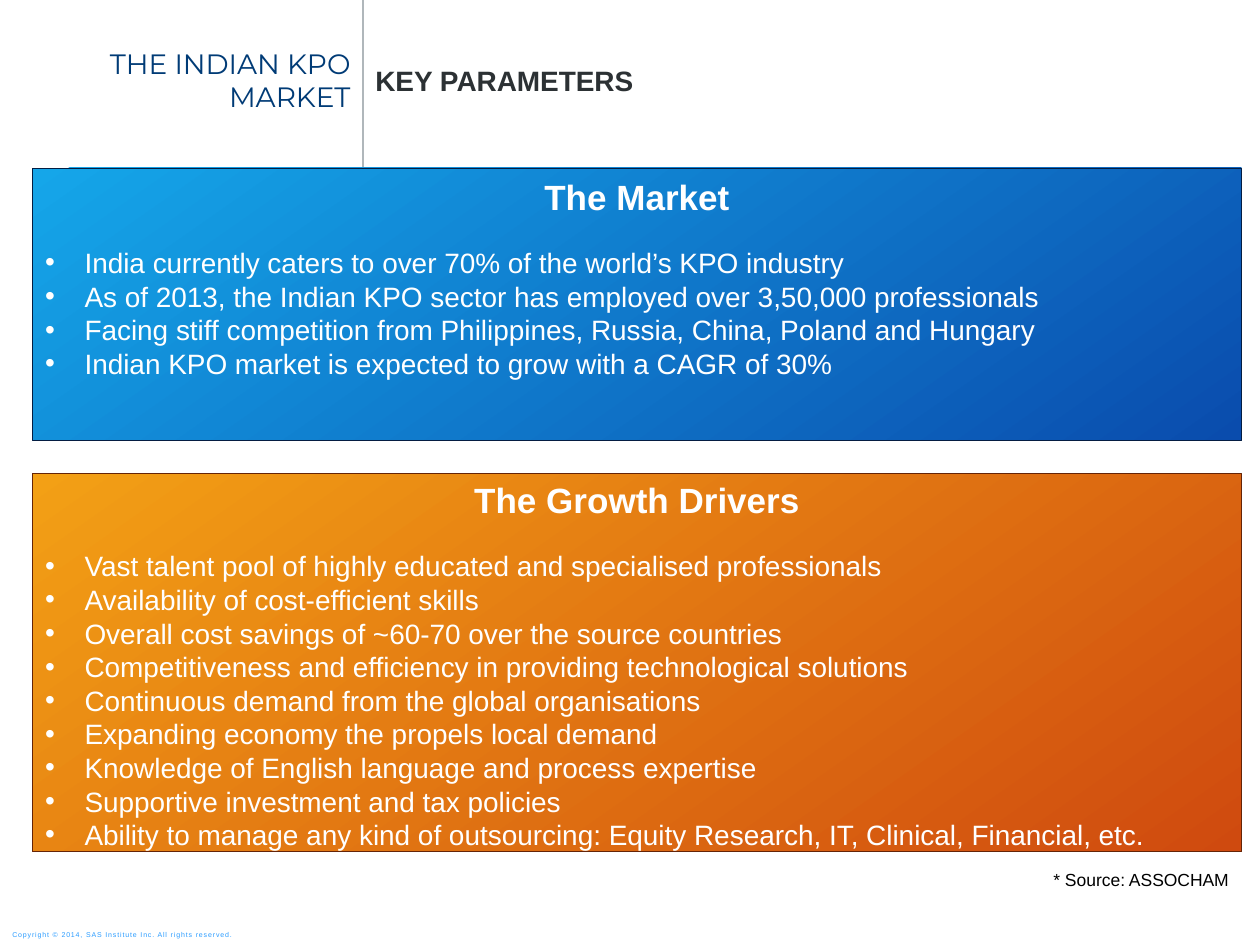
from lxml.etree import SubElement
from pptx import Presentation
from pptx.dml.color import RGBColor
from pptx.enum.shapes import MSO_CONNECTOR, MSO_SHAPE
from pptx.enum.text import MSO_ANCHOR, PP_ALIGN
from pptx.oxml.ns import qn
from pptx.util import Pt

WHITE = RGBColor(0xFF, 0xFF, 0xFF)
BLACK = RGBColor(0x00, 0x00, 0x00)
NAVY = RGBColor(0x00, 0x3B, 0x76)
CHARCOAL = RGBColor(0x2C, 0x31, 0x34)
GREY = RGBColor(0xB0, 0xB7, 0xBB)
SKY = RGBColor(0x2A, 0x9C, 0xFF)
BLUE_START = RGBColor(0x15, 0xA6, 0xE9)
BLUE_END = RGBColor(0x0A, 0x4C, 0xAD)
BLUE_EDGE = RGBColor(0x04, 0x1D, 0x42)
ORANGE_START = RGBColor(0xF3, 0xA0, 0x15)
ORANGE_END = RGBColor(0xCF, 0x4A, 0x0F)
ORANGE_EDGE = RGBColor(0x65, 0x24, 0x07)


def style(para, size, color, bold=False, name="Arial"):
    font = para.font if not para.runs else para.runs[0].font
    font.name = name
    font.size = Pt(size)
    font.bold = bold
    font.color.rgb = color


def add_label(text, left, top, width, height, align, anchor):
    box = page.shapes.add_textbox(Pt(left), Pt(top), Pt(width), Pt(height))
    frame = box.text_frame
    frame.word_wrap = True
    frame.vertical_anchor = anchor
    frame.text = text
    frame.paragraphs[0].alignment = align
    return frame.paragraphs[0]


deck = Presentation()
deck.slide_width = Pt(720)
deck.slide_height = Pt(540)
page = deck.slides.add_slide(deck.slide_layouts[6])

copyright_line = add_label("Copyright © 2014, SAS Institute Inc. All rights reserved.",
                           0, 527.8, 152, 12.2, PP_ALIGN.LEFT, MSO_ANCHOR.MIDDLE)
style(copyright_line, 4, SKY)
copyright_line.runs[0].font._element.set("spc", "50")

divider = page.shapes.add_connector(MSO_CONNECTOR.STRAIGHT, Pt(207.4), Pt(0), Pt(207.4), Pt(96))
divider.line.color.rgb = GREY
divider.line.width = Pt(1)
SubElement(divider._element.spPr, qn("a:effectLst"))

title = add_label("THE INDIAN KPO MARKET", 9.4, 22.5, 198, 46, PP_ALIGN.RIGHT, MSO_ANCHOR.MIDDLE)
style(title, 16, NAVY, name="Montserrat")

subtitle = add_label("KEY PARAMETERS", 207.4, 32.4, 476.6, 26.6, PP_ALIGN.LEFT, MSO_ANCHOR.MIDDLE)
style(subtitle, 16, CHARCOAL, bold=True)

panels = [
    ("The Market", 96, 155.5, 0.9, 15.5, (BLUE_START, BLUE_END, BLUE_EDGE), [
        "India currently caters to over 70% of the world’s KPO industry",
        "As of 2013, the Indian KPO sector has employed over 3,50,000 professionals",
        "Facing stiff competition from Philippines, Russia, China, Poland and Hungary",
        "Indian KPO market is expected to grow with a CAGR of 30%",
    ]),
    ("The Growth Drivers", 270.8, 216, 0.8, 16.5, (ORANGE_START, ORANGE_END, ORANGE_EDGE), [
        "Vast talent pool of highly educated and specialised professionals",
        "Availability of cost-efficient skills",
        "Overall cost savings of ~60-70 over the source countries",
        "Competitiveness and efficiency in providing technological solutions",
        "Continuous demand from the global organisations",
        "Expanding economy the propels local demand",
        "Knowledge of English language and process expertise",
        "Supportive investment and tax policies",
        "Ability to manage any kind of outsourcing: Equity Research, IT, Clinical, Financial, etc.",
    ]),
]
for heading, top, height, spacing, gap, (start, end, edge), points in panels:
    panel = page.shapes.add_shape(MSO_SHAPE.RECTANGLE, Pt(18.7), Pt(top), Pt(690.5), Pt(height))
    panel.shadow.inherit = False
    panel.fill.gradient()
    panel.fill.gradient_angle = 305
    for stop, color, position in zip(panel.fill.gradient_stops, (start, end), (0, 1)):
        stop.color.rgb = color
        stop.position = position
    panel.line.color.rgb = edge
    panel.line.width = Pt(0.5)

    frame = panel.text_frame
    frame.word_wrap = True
    frame.vertical_anchor = MSO_ANCHOR.TOP
    frame.margin_left = frame.margin_right = frame.margin_top = Pt(7.2)
    frame.margin_bottom = Pt(0)
    frame.text = heading
    para = frame.paragraphs[0]
    para.alignment = PP_ALIGN.CENTER
    para.line_spacing = spacing
    para.space_after = Pt(gap)
    style(para, 20, WHITE, bold=True)

    for point in points:
        para = frame.add_paragraph()
        para.text = point
        para.alignment = PP_ALIGN.LEFT
        properties = para._p.get_or_add_pPr()
        properties.set("marL", str(Pt(22.5)))
        properties.set("indent", str(Pt(-22.5)))
        SubElement(properties, qn("a:buFont"), typeface="Arial")
        SubElement(properties, qn("a:buChar"), char="•")
        style(para, 16, WHITE)

source = add_label("* Source: ASSOCHAM", 488.2, 493.2, 221, 19.4, PP_ALIGN.RIGHT, MSO_ANCHOR.TOP)
style(source, 10, BLACK)

deck.save("out.pptx")
